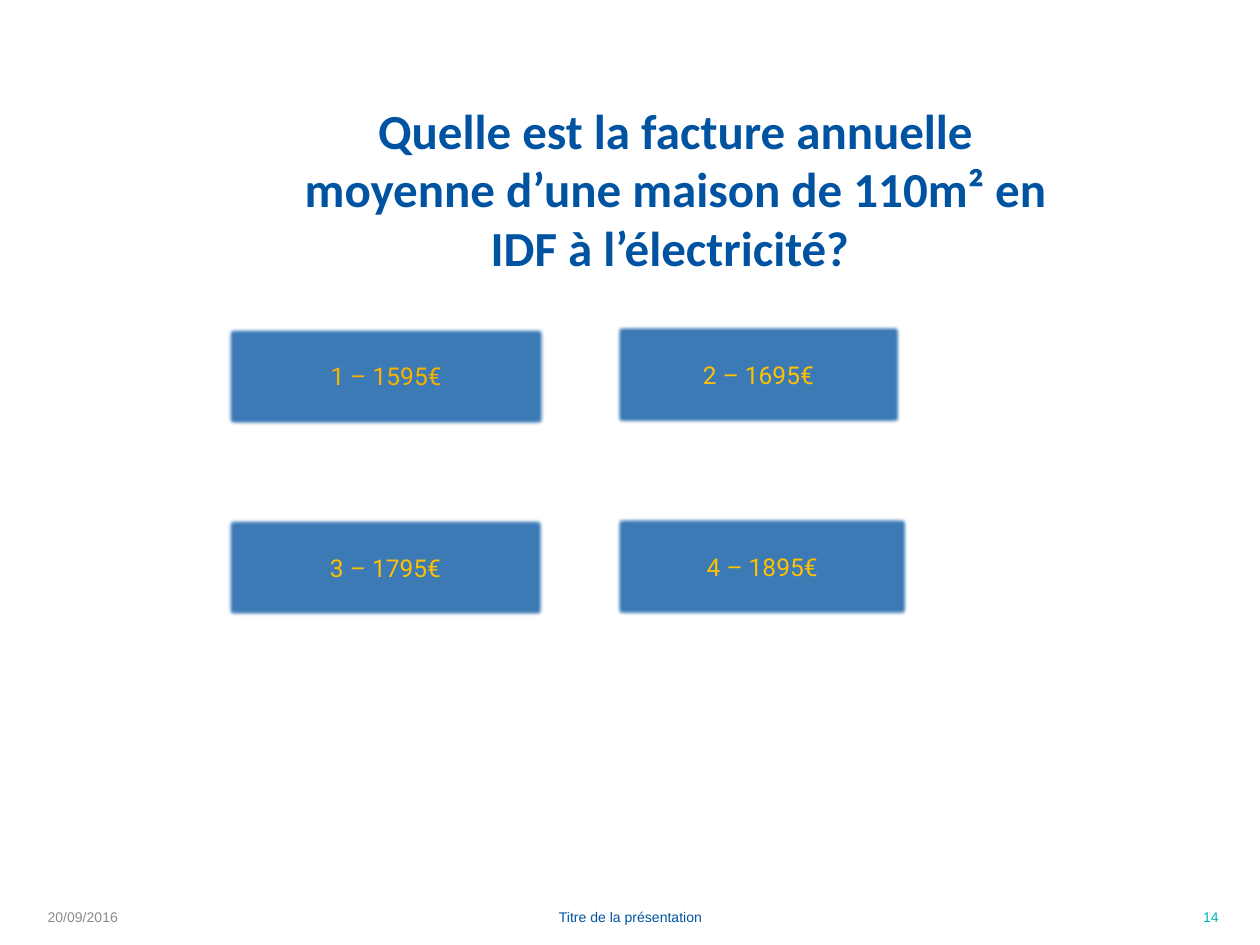
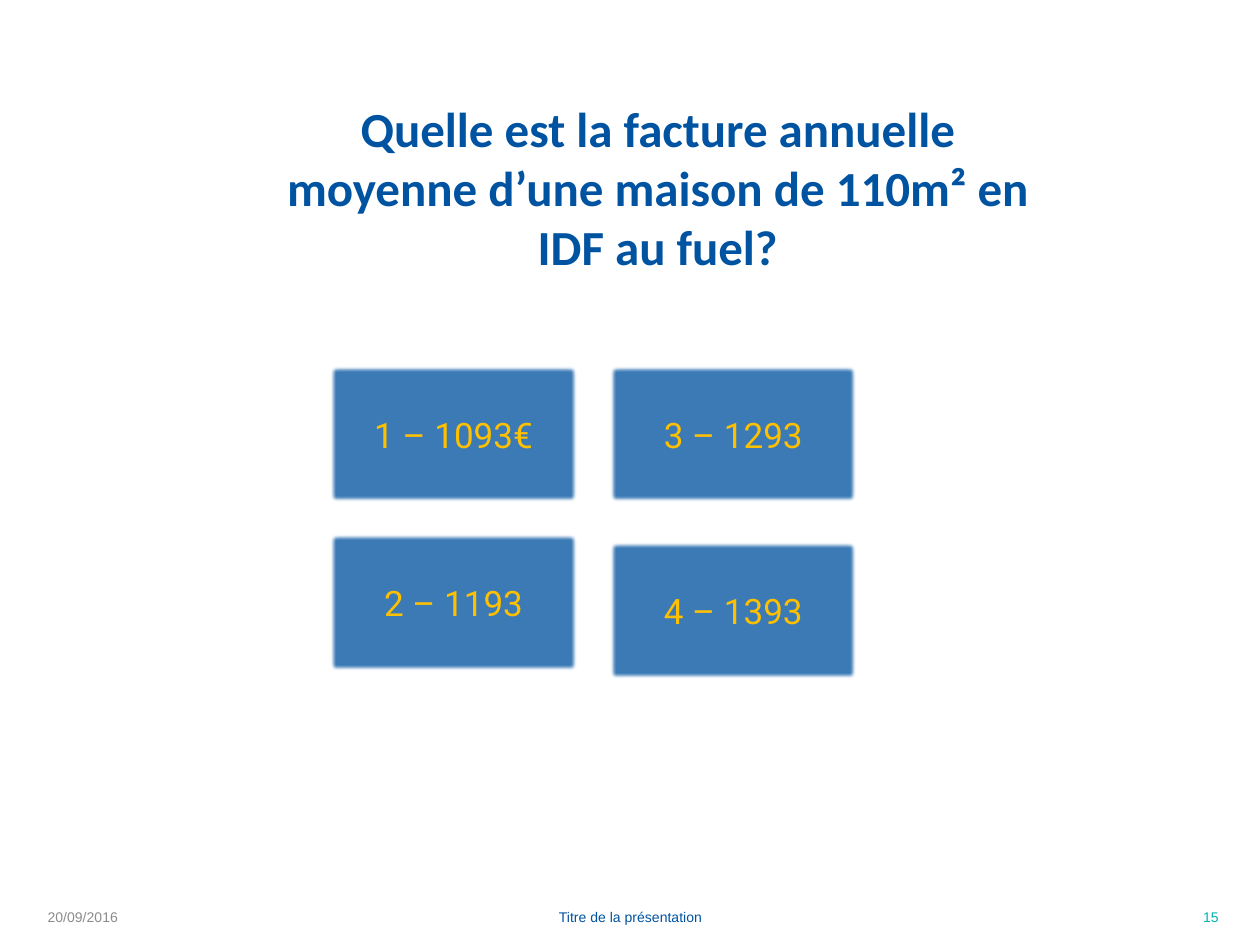
from lxml import etree
from pptx import Presentation
from pptx.dml.color import RGBColor
from pptx.enum.shapes import MSO_SHAPE
from pptx.enum.text import MSO_ANCHOR, PP_ALIGN
from pptx.oxml.ns import qn
from pptx.util import Inches, Pt

BLUE = RGBColor(0x00, 0x53, 0xA1)
TEAL = RGBColor(0x00, 0xB1, 0xAF)
GREY = RGBColor(0x8C, 0x8C, 0x8C)
GOLD = RGBColor(0xFF, 0xC0, 0x00)
AMBER = RGBColor(0xFA, 0xB2, 0x00)
LEFT, CENTER, RIGHT = PP_ALIGN.LEFT, PP_ALIGN.CENTER, PP_ALIGN.RIGHT
MIDDLE = MSO_ANCHOR.MIDDLE
RECTANGLE = MSO_SHAPE.RECTANGLE

ANSWER_OPACITY = 77000
SOFT_EDGE = Pt(2.5)


class QuizDeck:
    def __init__(self):
        self.deck = Presentation()
        self.deck.slide_width = Inches(10)
        self.deck.slide_height = Inches(7.5)
        self.slide = None

    def add_slide(self, number):
        self.slide = self.deck.slides.add_slide(self.deck.slide_layouts[6])
        self.footer("20/09/2016", 0.28, 2.33, GREY, LEFT)
        self.footer("Titre de la présentation", 3.42, 3.17, BLUE, CENTER)
        self.footer(str(number), 7.44, 2.33, TEAL, RIGHT)

    def set_text(self, box, text, font_name, size, color, align=CENTER, bold=False):
        frame = box.text_frame
        frame.word_wrap = True
        frame.vertical_anchor = MIDDLE
        frame.text = text
        paragraph = frame.paragraphs[0]
        paragraph.alignment = align
        font = paragraph.runs[0].font
        font.name = font_name
        font.size = Pt(size)
        font.bold = bold
        font.color.rgb = color

    def text_box(self, left, top, width, height):
        return self.slide.shapes.add_textbox(
            Inches(left), Inches(top), Inches(width), Inches(height))

    def footer(self, text, left, width, color, align):
        box = self.text_box(left, 7.08, width, 0.4)
        self.set_text(box, text, "Arial", 8, color, align)

    def question(self, text, left, top):
        box = self.text_box(left, top, 6.48, 0.69)
        self.set_text(box, text, "Calibri", 28, BLUE, bold=True)

    def answer(self, text, left, top, width, height, size, color=GOLD):
        box = self.slide.shapes.add_shape(
            RECTANGLE, Inches(left), Inches(top), Inches(width), Inches(height))
        box.fill.solid()
        box.fill.fore_color.rgb = BLUE
        box.line.fill.background()
        box.shadow.inherit = False
        properties = box.element.spPr
        fill_color = properties.find(qn("a:solidFill")).find(qn("a:srgbClr"))
        etree.SubElement(fill_color, qn("a:alpha"), val=str(ANSWER_OPACITY))
        effects = properties.find(qn("a:effectLst"))
        etree.SubElement(effects, qn("a:softEdge"), rad=str(SOFT_EDGE))
        self.set_text(box, text, "Roboto", size, color)


def main():
    quiz = QuizDeck()
    opening = "Quelle est la facture annuelle moyenne d’une maison de 110m² en IDF "

    quiz.add_slide(14)
    quiz.question(opening + "à l’électricité? ", 2.12, 1.15)
    for text, left, top, width, color in (
        ("1 – 1595€", 1.79, 2.58, 2.55, AMBER),
        ("2 – 1695€", 4.88, 2.57, 2.28, GOLD),
        ("3 – 1795€", 1.79, 4.1, 2.54, GOLD),
        ("4 – 1895€", 4.88, 4.09, 2.34, GOLD),
    ):
        quiz.answer(text, left, top, width, 0.81, 14, color)

    quiz.add_slide(15)
    quiz.question(opening + "au fuel?", 1.98, 1.14)
    for text, left, top in (
        ("1 – 1093€", 2.61, 2.89),
        ("2 – 1193", 2.61, 4.23),
        ("3 – 1293", 4.83, 2.89),
        ("4 – 1393", 4.83, 4.29),
    ):
        quiz.answer(text, left, top, 1.98, 1.11, 20)

    quiz.deck.save("out.pptx")


if __name__ == "__main__":
    main()
